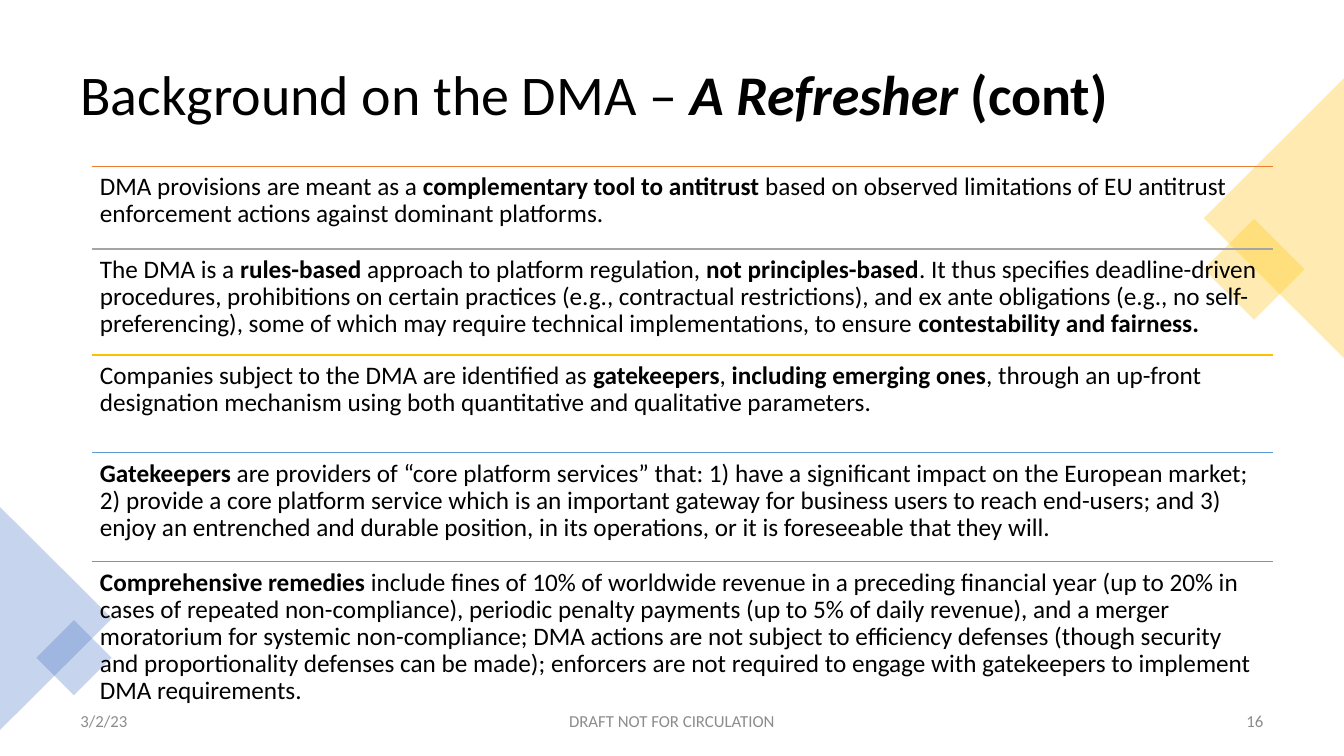
from lxml import etree
from pptx import Presentation
from pptx.dml.color import RGBColor
from pptx.enum.shapes import MSO_CONNECTOR, MSO_SHAPE
from pptx.enum.text import MSO_ANCHOR, PP_ALIGN
from pptx.oxml.ns import qn
from pptx.util import Pt

RECT, TRIANGLE = MSO_SHAPE.RECTANGLE, MSO_SHAPE.ISOSCELES_TRIANGLE
STRAIGHT = MSO_CONNECTOR.STRAIGHT
TOP, MIDDLE = MSO_ANCHOR.TOP, MSO_ANCHOR.MIDDLE
LEFT, CENTER, RIGHT = PP_ALIGN.LEFT, PP_ALIGN.CENTER, PP_ALIGN.RIGHT

COLORS = {
    "text": "000000", "footer": "8C8C8C", "orange": "ED7D31", "gray": "A5A5A5",
    "gold": "FFC000", "sky": "5B9BD5", "green": "70AD47", "blue": "4472C4",
}


class Page:
    font = "Calibri"

    def __init__(self, slide):
        self.shapes = slide.shapes

    def color(self, name):
        return RGBColor.from_string(COLORS[name])

    def text(self, box, runs, size, color="text", align=LEFT, anchor=MIDDLE,
             inset=(7.2, 3.6), spacing=1.0, after=0):
        """Each run is a pair: its text and its style letters (b, i)."""
        frame = self.shapes.add_textbox(*map(Pt, box)).text_frame
        frame.word_wrap = True
        frame.vertical_anchor = anchor
        frame.margin_left = frame.margin_right = Pt(inset[0])
        frame.margin_top = frame.margin_bottom = Pt(inset[1])
        para = frame.paragraphs[0]
        para.alignment = align
        para.line_spacing = spacing
        para.space_after = Pt(after)
        para.font.name = self.font
        para.font.size = Pt(size)
        para.font.color.rgb = self.color(color)
        for words, style in runs:
            run = para.add_run()
            run.text = words
            if "b" in style:
                run.font.bold = True
            if "i" in style:
                run.font.italic = True

    def tint(self, kind, box, angle, color, alpha=30):
        shape = self.shapes.add_shape(kind, *map(Pt, box))
        shape.rotation = angle
        shape.shadow.inherit = False
        shape.line.fill.background()
        shape.fill.solid()
        shape.fill.fore_color.rgb = self.color(color)
        fill = shape.element.spPr.find(qn("a:solidFill"))
        etree.SubElement(fill[0], qn("a:alpha"), val=str(alpha * 1000))

    def rule(self, left, top, width, color):
        line = self.shapes.add_connector(
            STRAIGHT, Pt(left), Pt(top), Pt(left + width), Pt(top))
        line.line.color.rgb = self.color(color)
        line.line.width = Pt(1)
        etree.SubElement(line.element.spPr, qn("a:effectLst"))


def marked(words):
    """Split at asterisks; every second piece is bold."""
    pieces = enumerate(words.split("*"))
    return [(piece, "b" if i % 2 else "") for i, piece in pieces if piece]


# Rule colour, row height, text with bold between asterisks
ROWS = [
    ("orange", 59.2,
     "DMA provisions are meant as a *complementary tool to antitrust* based on "
     "observed limitations of EU antitrust enforcement actions against dominant "
     "platforms."),
    ("gray", 75.6,
     "The DMA is a *rules-based* approach to platform regulation, "
     "*not principles-based*. It thus specifies deadline-driven procedures, "
     "prohibitions on certain practices (e.g., contractual restrictions), and ex "
     "ante obligations (e.g., no self-preferencing), some of which may require "
     "technical implementations, to ensure *contestability and fairness.*"),
    ("gold", 69.8,
     "Companies subject to the DMA are identified as *gatekeepers*, "
     "*including emerging ones*, through an up-front designation mechanism using "
     "both quantitative and qualitative parameters."),
    ("sky", 77.8,
     "*Gatekeepers *are providers of “core platform services” that: 1) have a "
     "significant impact on the European market; 2) provide a core platform "
     "service which is an important gateway for business users to reach "
     "end-users; and 3) enjoy an entrenched and durable position, in its "
     "operations, or it is foreseeable that they will."),
    ("green", 99.4,
     "*Comprehensive remedies *include fines of 10% of worldwide revenue in a "
     "preceding financial year (up to 20% in cases of repeated non-compliance), "
     "periodic penalty payments (up to 5% of daily revenue), and a merger "
     "moratorium for systemic non-compliance; DMA actions are not subject to "
     "efficiency defenses (though security and proportionality defenses can be "
     "made); enforcers are not required to engage with gatekeepers to implement "
     "DMA requirements."),
]

FOOTERS = [
    (50.4, 216, "3/2/23", LEFT),
    (318, 324, "DRAFT NOT FOR CIRCULATION", CENTER),
    (693.6, 216, "16", RIGHT),
]


def main():
    deck = Presentation()
    deck.slide_width, deck.slide_height = Pt(960), Pt(540)
    page = Page(deck.slides.add_slide(deck.slide_layouts[6]))

    # Title
    title = [("Background on the DMA – ", ""), ("A Refresher ", "bi"), ("(cont)", "b")]
    page.text((50.4, 25.2, 859, 89.3), title, 40, spacing=0.9)

    # Corner decoration
    page.tint(RECT, (870.3, 166.9, 51, 51), 45, "gold")
    page.tint(TRIANGLE, (810, 105.8, 199.8, 100), 270, "gold")
    page.tint(TRIANGLE, (-39.6, 401.8, 159.2, 80), 90, "blue")
    page.tint(RECT, (33.8, 450.8, 38, 38), 45, "blue")

    # Footer
    for left, width, words, align in FOOTERS:
        page.text((left, 500.4, width, 28.8), [(words, "")], 12, "footer",
                  align, after=6)

    # Ruled rows
    left, top, width = 66, 118.8, 843
    for color, height, words in ROWS:
        page.rule(left, top, width, color)
        page.text((left, top, width, height), marked(words), 18, anchor=TOP,
                  inset=(5.4, 5.4), spacing=0.9, after=6.3)
        top += height

    deck.save("out.pptx")


if __name__ == "__main__":
    main()
